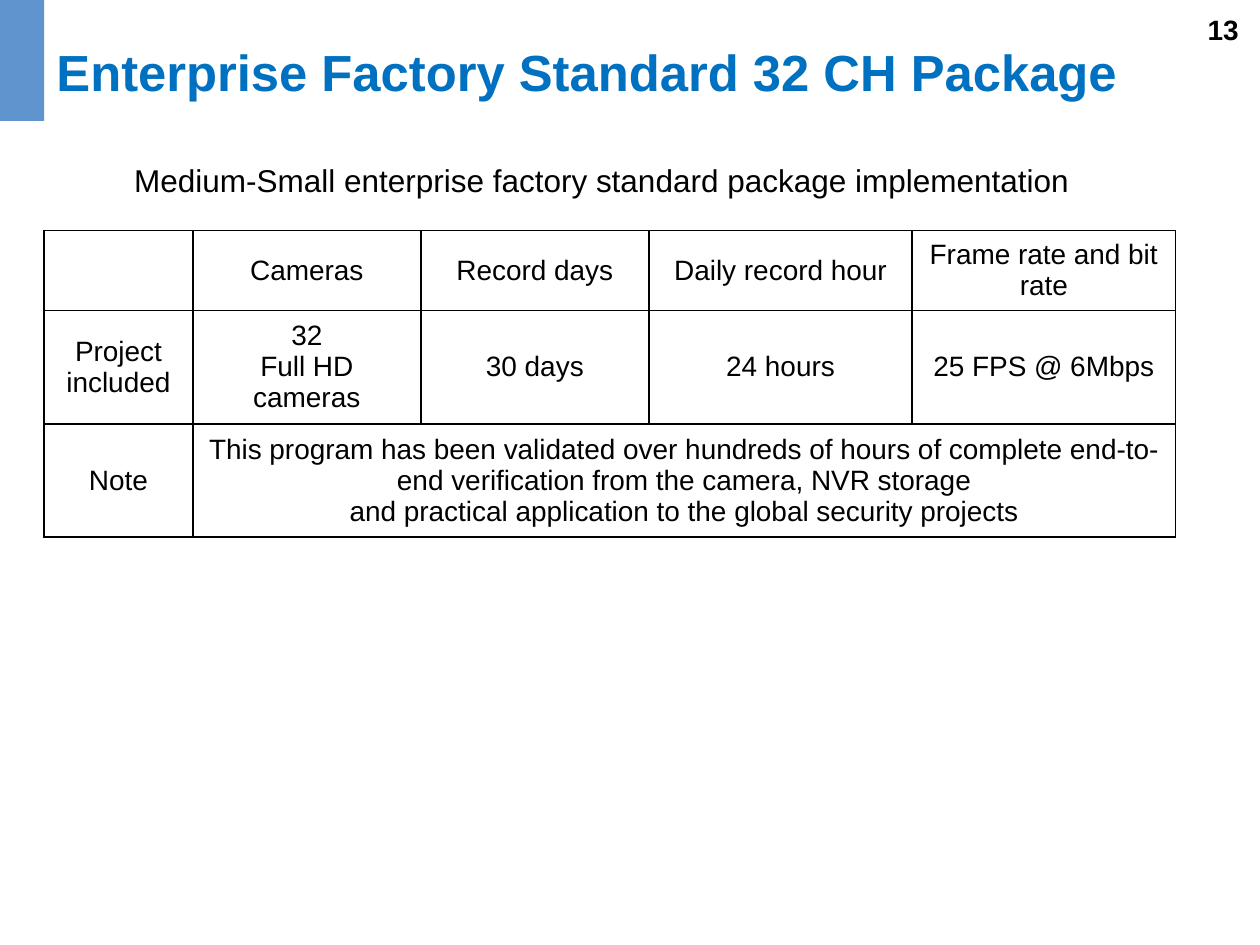
"""Build the slide on the 32 channel factory package."""
import pptx
import pptx.dml.color
import pptx.enum.shapes
import pptx.enum.text
import pptx.oxml
import pptx.oxml.ns
import pptx.util

Inches = pptx.util.Inches
ALIGN = pptx.enum.text.PP_ALIGN
ANCHOR = pptx.enum.text.MSO_ANCHOR

PAGE_NUMBER = "13"
TITLE = "Enterprise Factory Standard 32 CH Package"
SUBTITLE = "Medium-Small enterprise factory standard package implementation"
ROWS = [
    ["", "Cameras", "Record days", "Daily record hour", "Frame rate and bit rate"],
    ["Project included", "32\nFull HD cameras", "30 days", "24 hours", "25 FPS @ 6Mbps"],
    ["Note", "This program has been validated over hundreds of hours of complete "
     "end-to-end verification from the camera, NVR storage\n"
     "and practical application to the global security projects"],
]
COLUMN_WIDTHS = [1.18, 1.81, 1.81, 2.09, 2.09]
ROW_HEIGHTS = [0.59, 0.84, 0.84]
BLACK, TITLE_BLUE, ACCENT_BLUE = "000000", "0070C0", "6094CE"


def color(value):
    return pptx.dml.color.RGBColor.from_string(value)


def write(frame, text, size, alignment, text_color=BLACK, bold=False):
    frame.text = text
    for paragraph in frame.paragraphs:
        paragraph.alignment = alignment
        paragraph.font.name = "Arial"
        paragraph.font.size = pptx.util.Pt(size)
        paragraph.font.bold = bold
        paragraph.font.color.rgb = color(text_color)


def add_text(slide, box, text, size, alignment, text_color=BLACK, bold=False, wrap=True):
    frame = slide.shapes.add_textbox(*map(Inches, box)).text_frame
    frame.word_wrap = wrap
    write(frame, text, size, alignment, text_color, bold)
    return frame


def add_borders(cell):
    properties = cell._tc.get_or_add_tcPr()
    for position, side in enumerate(("lnL", "lnR", "lnT", "lnB")):
        properties.insert(position, pptx.oxml.parse_xml(
            f'<a:{side} {pptx.oxml.ns.nsdecls("a")} w="12700"><a:solidFill>'
            f'<a:srgbClr val="{BLACK}"/></a:solidFill></a:{side}>'))


def add_package_table(slide):
    table = slide.shapes.add_table(
        len(ROW_HEIGHTS), len(COLUMN_WIDTHS), Inches(0.35), Inches(1.83),
        Inches(sum(COLUMN_WIDTHS)), Inches(sum(ROW_HEIGHTS))).table
    table.first_row = table.horz_banding = False
    for column, width in zip(table.columns, COLUMN_WIDTHS):
        column.width = Inches(width)
    for row, height in zip(table.rows, ROW_HEIGHTS):
        row.height = Inches(height)
    for cell in table.iter_cells():
        cell.fill.background()
        add_borders(cell)
    table.cell(2, 1).merge(table.cell(2, 4))
    for row_index, texts in enumerate(ROWS):
        for column_index, text in enumerate(texts):
            cell = table.cell(row_index, column_index)
            cell.vertical_anchor = ANCHOR.MIDDLE
            write(cell.text_frame, text, 16, ALIGN.CENTER)


def main():
    presentation = pptx.Presentation()
    presentation.slide_width, presentation.slide_height = Inches(10), Inches(7.5)
    slide = presentation.slides.add_slide(presentation.slide_layouts[6])

    add_text(slide, (7.6, 0.05, 2.33, 0.52), PAGE_NUMBER, 16, ALIGN.RIGHT, bold=True)
    title = add_text(slide, (0.35, -0.11, 9, 1.25), TITLE, 29, ALIGN.LEFT, TITLE_BLUE, True)
    title.vertical_anchor = ANCHOR.MIDDLE
    title.paragraphs[0].line_spacing = 1.2
    add_package_table(slide)
    subtitle = add_text(slide, (0.93, 1.23, 7.69, 0.4), SUBTITLE, 18, ALIGN.CENTER, wrap=False)
    subtitle.auto_size = pptx.enum.text.MSO_AUTO_SIZE.SHAPE_TO_FIT_TEXT

    accent = slide.shapes.add_shape(
        pptx.enum.shapes.MSO_SHAPE.RECTANGLE, *map(Inches, (0, -0.03, 0.35, 0.99)))
    accent.shadow.inherit = False
    accent.fill.solid()
    accent.fill.fore_color.rgb = color(ACCENT_BLUE)
    accent.line.fill.background()

    presentation.save("out.pptx")


if __name__ == "__main__":
    main()
